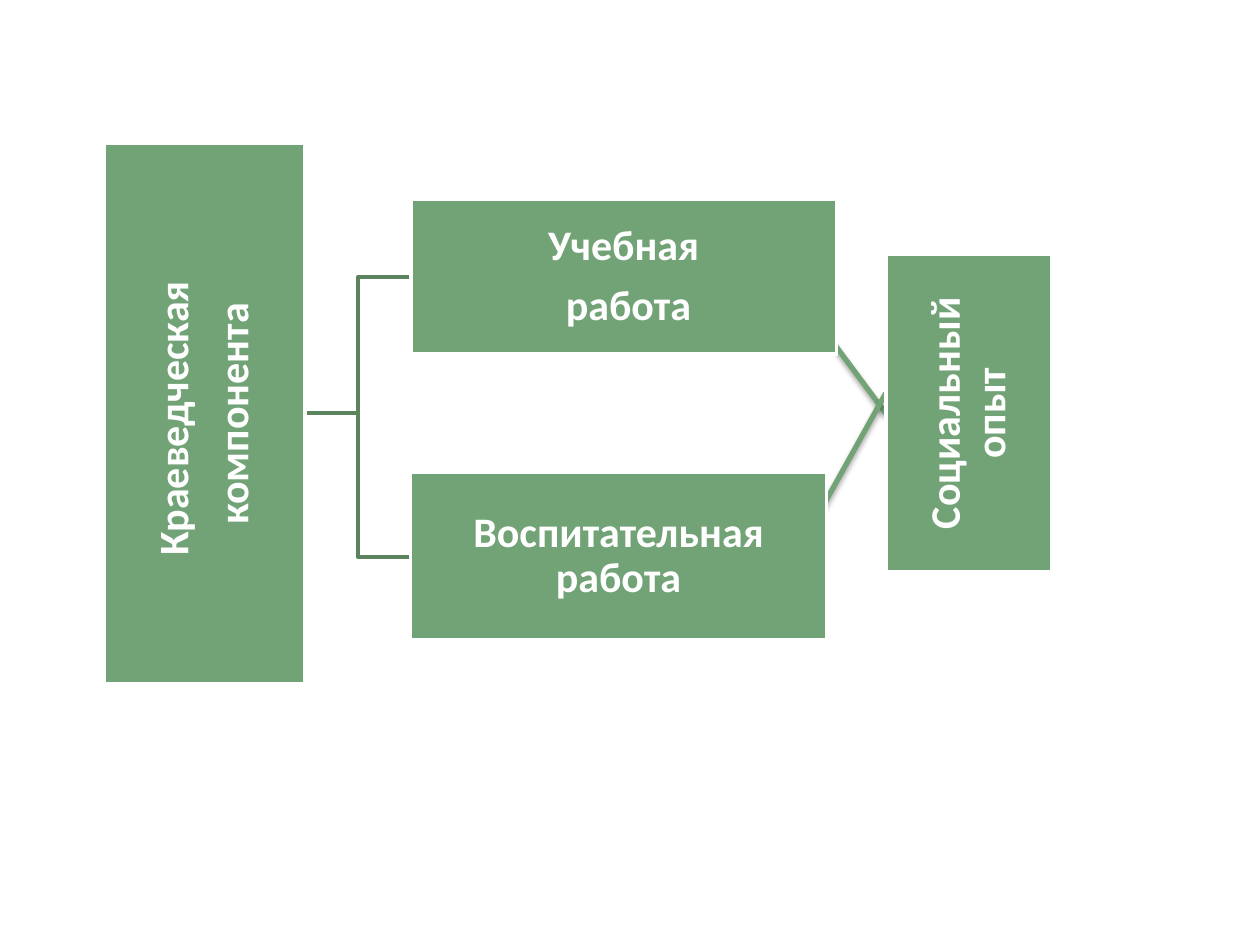
from dataclasses import dataclass

from lxml.etree import SubElement
from pptx import Presentation
from pptx.dml.color import RGBColor
from pptx.enum.shapes import MSO_CONNECTOR as Connector, MSO_SHAPE as Shape
from pptx.enum.text import MSO_ANCHOR as Anchor, PP_ALIGN as Align
from pptx.oxml.ns import qn
from pptx.util import Inches, Pt

COLUMNS, ROWS = 100, 75
GREEN, DARK_GREEN, WHITE = "72A376", "5B835E", "FFFFFF"
FRAME_FORMAT = {
    "word_wrap": True,
    "vertical_anchor": Anchor.MIDDLE,
    **{f"margin_{side}": Inches(0.02) for side in ("left", "right", "top", "bottom")},
}
PARAGRAPH_FORMAT = {"alignment": Align.CENTER, "line_spacing": 0.9, "space_after": Pt(8.4)}
FONT_FORMAT = {"name": "Calibri", "size": Pt(24), "bold": True}

presentation = Presentation()
presentation.slide_width, presentation.slide_height = Inches(10), Inches(7.5)
slide = presentation.slides.add_slide(presentation.slide_layouts[6])


@dataclass
class Box:
    """A labelled block; left, top, width and height are grid cells before turning."""
    lines: tuple[str, ...]
    left: float
    top: float
    width: float
    height: float
    rotation: int = 0


@dataclass
class Link:
    """A straight line between two grid points."""
    start: tuple[float, float]
    end: tuple[float, float]


def column(count: float) -> int:
    return round(presentation.slide_width * count / COLUMNS)


def row(count: float) -> int:
    return round(presentation.slide_height * count / ROWS)


def color(value: str) -> RGBColor:
    return RGBColor.from_string(value)


def apply(target, values: dict) -> None:
    for name, value in values.items():
        setattr(target, name, value)


def set_line(shape, value: str, width: float) -> None:
    shape.line.color.rgb = color(value)
    shape.line.width = Pt(width)


def add_shadow(connector) -> None:
    effects = SubElement(connector._element.spPr, qn("a:effectLst"))
    shadow = SubElement(effects, qn("a:outerShdw"), blurRad=str(Pt(3.1)), dist=str(Pt(1.8)),
                        dir="5400000", rotWithShape="0")
    black = SubElement(shadow, qn("a:srgbClr"), val="000000")
    SubElement(black, qn("a:alpha"), val="35000")


def draw_link(link: Link):
    connector = slide.shapes.add_connector(
        Connector.STRAIGHT, column(link.start[0]), row(link.start[1]),
        column(link.end[0]), row(link.end[1]))
    set_line(connector, GREEN, 3)
    add_shadow(connector)
    return connector


def draw_branch(points: list[tuple[float, float]]) -> None:
    first, *others = [(column(x), row(y)) for x, y in points]
    builder = slide.shapes.build_freeform(*first)
    builder.add_line_segments(others, close=False)
    branch = builder.convert_to_shape()
    branch.fill.background()
    branch.shadow.inherit = False
    set_line(branch, DARK_GREEN, 2)


def draw_box(box: Box):
    shape = slide.shapes.add_shape(
        Shape.RECTANGLE, column(box.left), row(box.top), column(box.width), row(box.height))
    shape.rotation = box.rotation
    shape.shadow.inherit = False
    shape.fill.solid()
    shape.fill.fore_color.rgb = color(GREEN)
    set_line(shape, WHITE, 2)
    frame = shape.text_frame
    apply(frame, FRAME_FORMAT)
    for index, text in enumerate(box.lines):
        paragraph = frame.add_paragraph() if index else frame.paragraphs[0]
        apply(paragraph, PARAGRAPH_FORMAT)
        run = paragraph.add_run()
        run.text = text
        apply(run.font, FONT_FORMAT)
        run.font.color.rgb = color(WHITE)
    return shape


# Lines that lead to the social experience, behind the boxes
MIDDLE = 32.8
experience_point = (70.3, MIDDLE)
study_link = draw_link(Link((63.3, 23.4), experience_point))
draw_link(Link((63.3, 43.8), (70.3, 31.2)))

# Bracket from the component to both kinds of work
for branch_row in (44.2, 22):
    draw_branch([(24.1, MIDDLE), (28.4, MIDDLE), (28.4, branch_row), (32.6, branch_row)])

# Boxes
for box in (
    Box(("Краеведческая ", "компонента"), -5.2, 24.9, 42.9, 15.9, 270),
    Box(("Учебная", " работа"), 32.6, 15.8, 33.8, 12.3),
    Box(("Воспитательная работа",), 32.6, 37.5, 33, 13.3),
):
    draw_box(box)
experience = draw_box(Box(("Социальный опыт",), 64.3, 26.2, 25.2, 13.2, 270))

# The top of the turned box faces left, so the joined end is set to that side
study_link.end_connect(experience, 0)
study_link.end_x, study_link.end_y = column(experience_point[0]), row(experience_point[1])

presentation.save("out.pptx")
